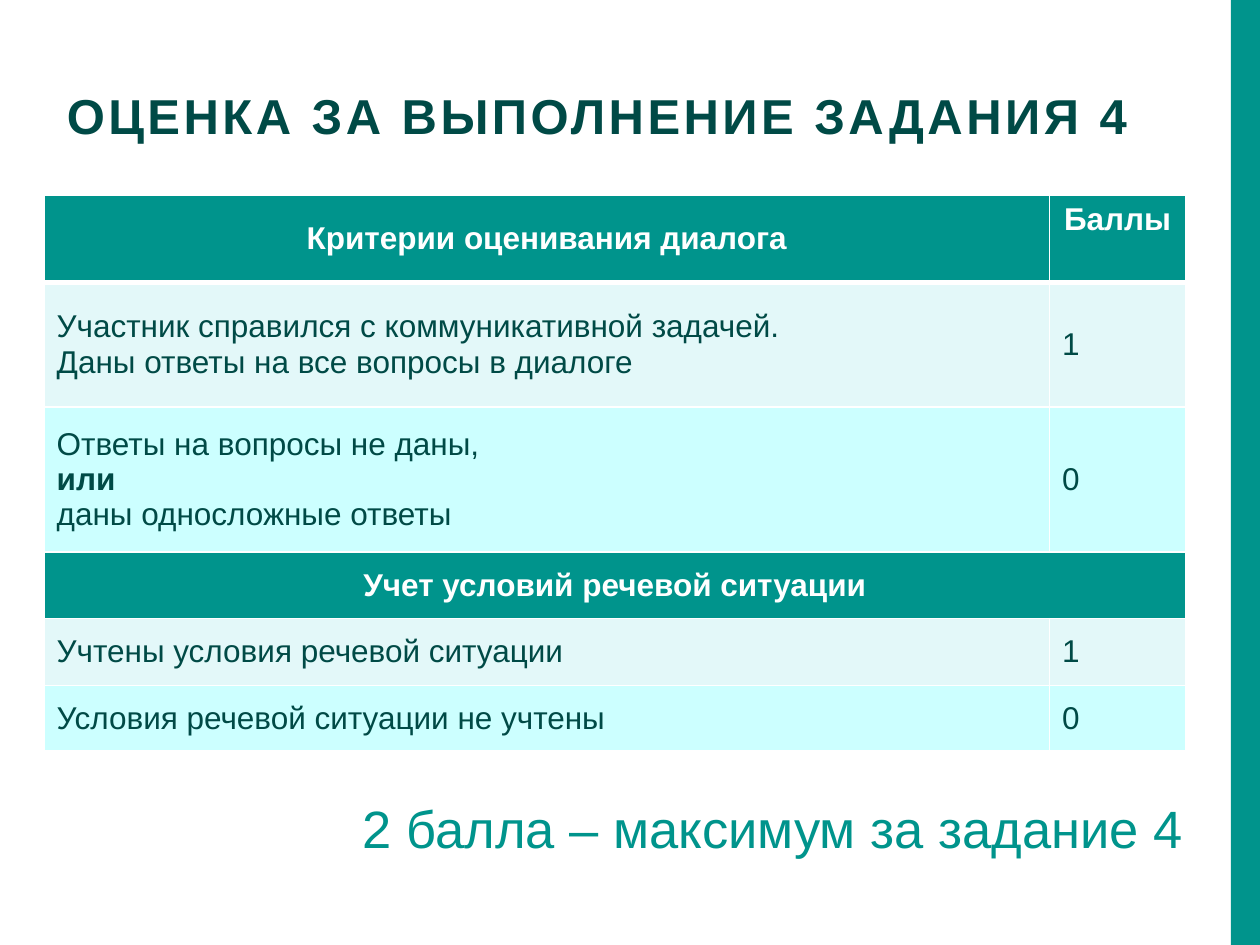
import pptx
import pptx.dml.color
import pptx.enum.shapes
import pptx.enum.text
import pptx.oxml
import pptx.oxml.ns
import pptx.util
from pptx.util import Inches

TEAL = "00948C"
DARK = "004A46"
WHITE = "FFFFFF"
PALE = "E3F8F9"
AQUA = "CCFFFF"
ALIGN = pptx.enum.text.PP_ALIGN
ANCHOR = pptx.enum.text.MSO_ANCHOR
COLUMN_WIDTHS = [7.98, 1.08]
ROW_HEIGHTS = [0.69, 0.99, 1.15, 0.53, 0.53, 0.52]
ROWS = [
    (TEAL, ["Критерии оценивания диалога"], "Баллы"),
    (PALE, ["Участник справился с коммуникативной задачей.",
            "Даны ответы на все вопросы в диалоге"], "1"),
    (AQUA, ["Ответы на вопросы не даны,", "или", "даны односложные ответы"], "0"),
    (TEAL, ["Учет условий речевой ситуации"], None),
    (PALE, ["Учтены условия речевой ситуации"], "1"),
    (AQUA, ["Условия речевой ситуации не учтены"], "0"),
]


def color(value):
    return pptx.dml.color.RGBColor.from_string(value)


def paint(item, value):
    item.fill.solid()
    item.fill.fore_color.rgb = color(value)


def add_span(para, text, size, value, bold=False):
    span = para.add_run()
    span.text = text
    span.font.name = "Arial"
    span.font.size = pptx.util.Pt(size)
    span.font.bold = bold
    span.font.color.rgb = color(value)
    return span


def add_side_bar(page):
    bar = page.shapes.add_shape(
        pptx.enum.shapes.MSO_SHAPE.RECTANGLE,
        Inches(9.77), 0, Inches(0.23), Inches(7.5))
    bar.shadow.inherit = False
    paint(bar, TEAL)
    bar.line.fill.background()


def fill_title(page, text):
    title = page.shapes.title
    title.left, title.top = Inches(0.43), Inches(0.68)
    title.width, title.height = Inches(9), Inches(0.71)
    frame = title.text_frame
    frame.auto_size = pptx.enum.text.MSO_AUTO_SIZE.NONE
    frame.vertical_anchor = ANCHOR.TOP
    para = frame.paragraphs[0]
    para.alignment = ALIGN.LEFT
    para.line_spacing = 0.9
    span = add_span(para, text, 28, DARK, True)
    span._r.get_or_add_rPr().set("spc", "200")


def set_borders(cell, bottom_width):
    properties = cell._tc.get_or_add_tcPr()
    widths = {"lnL": 1, "lnR": 1, "lnT": 1, "lnB": bottom_width}
    for index, (side, width) in enumerate(widths.items()):
        line = pptx.oxml.parse_xml(
            f'<a:{side} {pptx.oxml.ns.nsdecls("a")} w="{pptx.util.Pt(width)}">'
            f'<a:solidFill><a:srgbClr val="{WHITE}"/></a:solidFill></a:{side}>')
        properties.insert(index, line)


def fill_cell(cell, lines, background, anchor=ANCHOR.MIDDLE):
    heading = background == TEAL
    paint(cell, background)
    cell.vertical_anchor = anchor
    frame = cell.text_frame
    for index, text in enumerate(lines):
        para = frame.add_paragraph() if index else frame.paragraphs[0]
        para.alignment = ALIGN.CENTER if heading else ALIGN.LEFT
        add_span(para, text, 18, WHITE if heading else DARK,
                 heading or text == "или")


def add_criteria_table(page):
    table = page.shapes.add_table(
        len(ROWS), len(COLUMN_WIDTHS), Inches(0.35), Inches(1.55),
        Inches(sum(COLUMN_WIDTHS)), Inches(sum(ROW_HEIGHTS))).table
    for column, width in zip(table.columns, COLUMN_WIDTHS):
        column.width = Inches(width)
    for index, (background, criteria, score) in enumerate(ROWS):
        table.rows[index].height = Inches(ROW_HEIGHTS[index])
        left, right = table.cell(index, 0), table.cell(index, 1)
        fill_cell(left, criteria, background)
        if score is None:
            paint(right, background)
            left.merge(right)
        else:
            anchor = ANCHOR.MIDDLE if index else ANCHOR.TOP
            fill_cell(right, [score], background, anchor)
        for cell in (left, right):
            set_borders(cell, 1 if index else 3)


def add_total(page, text):
    box = page.shapes.add_textbox(
        Inches(2.32), Inches(6.27), Inches(7.17), Inches(0.61))
    frame = box.text_frame
    frame.word_wrap = True
    frame.auto_size = pptx.enum.text.MSO_AUTO_SIZE.SHAPE_TO_FIT_TEXT
    para = frame.paragraphs[0]
    para.alignment = ALIGN.RIGHT
    add_span(para, text, 30, TEAL)


def main():
    deck = pptx.Presentation()
    deck.slide_width, deck.slide_height = Inches(10), Inches(7.5)
    page = deck.slides.add_slide(deck.slide_layouts[5])
    add_side_bar(page)
    fill_title(page, "ОЦЕНКА ЗА ВЫПОЛНЕНИЕ ЗАДАНИЯ 4")
    add_criteria_table(page)
    add_total(page, "2 балла – максимум за задание 4")
    deck.save("out.pptx")


if __name__ == "__main__":
    main()
